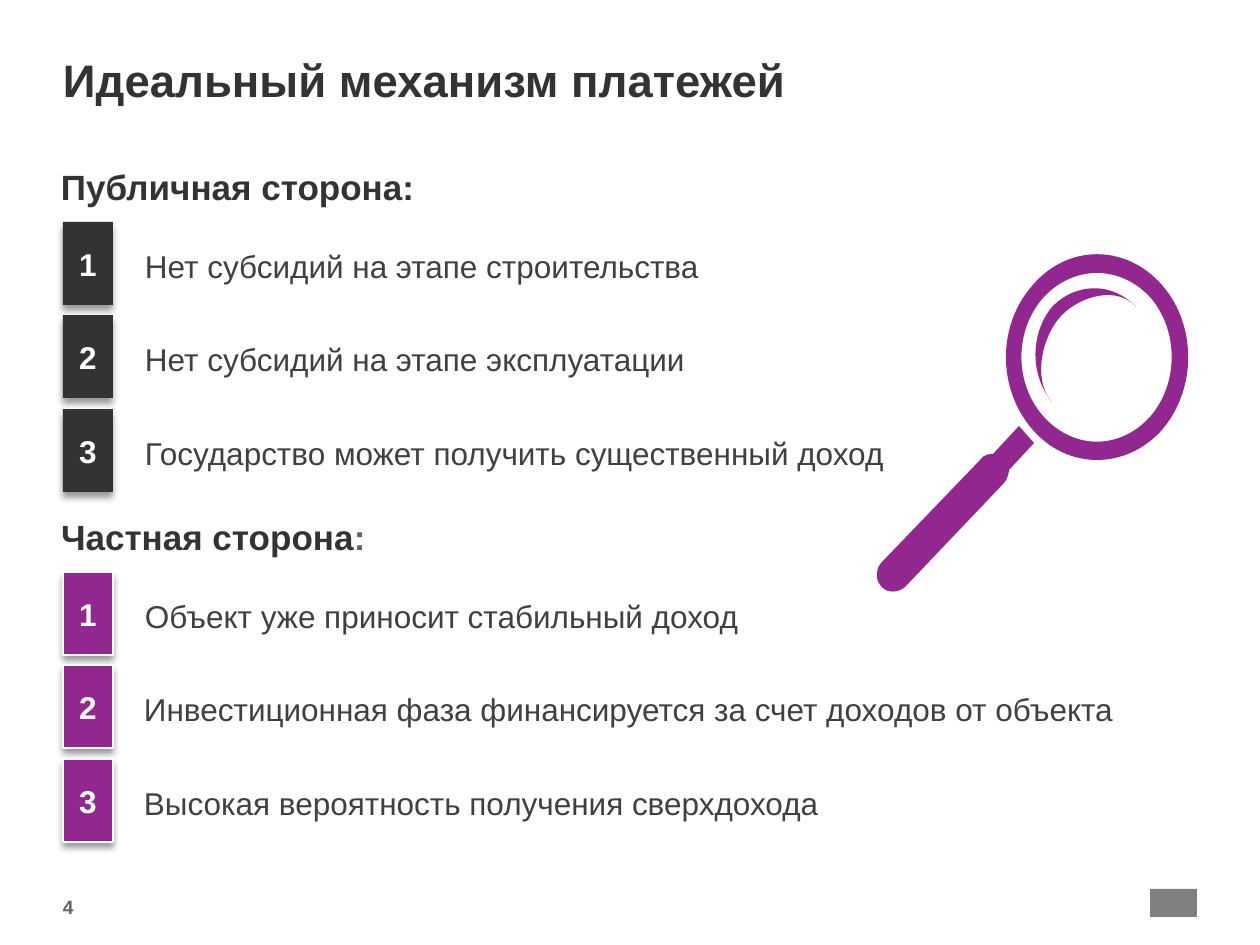
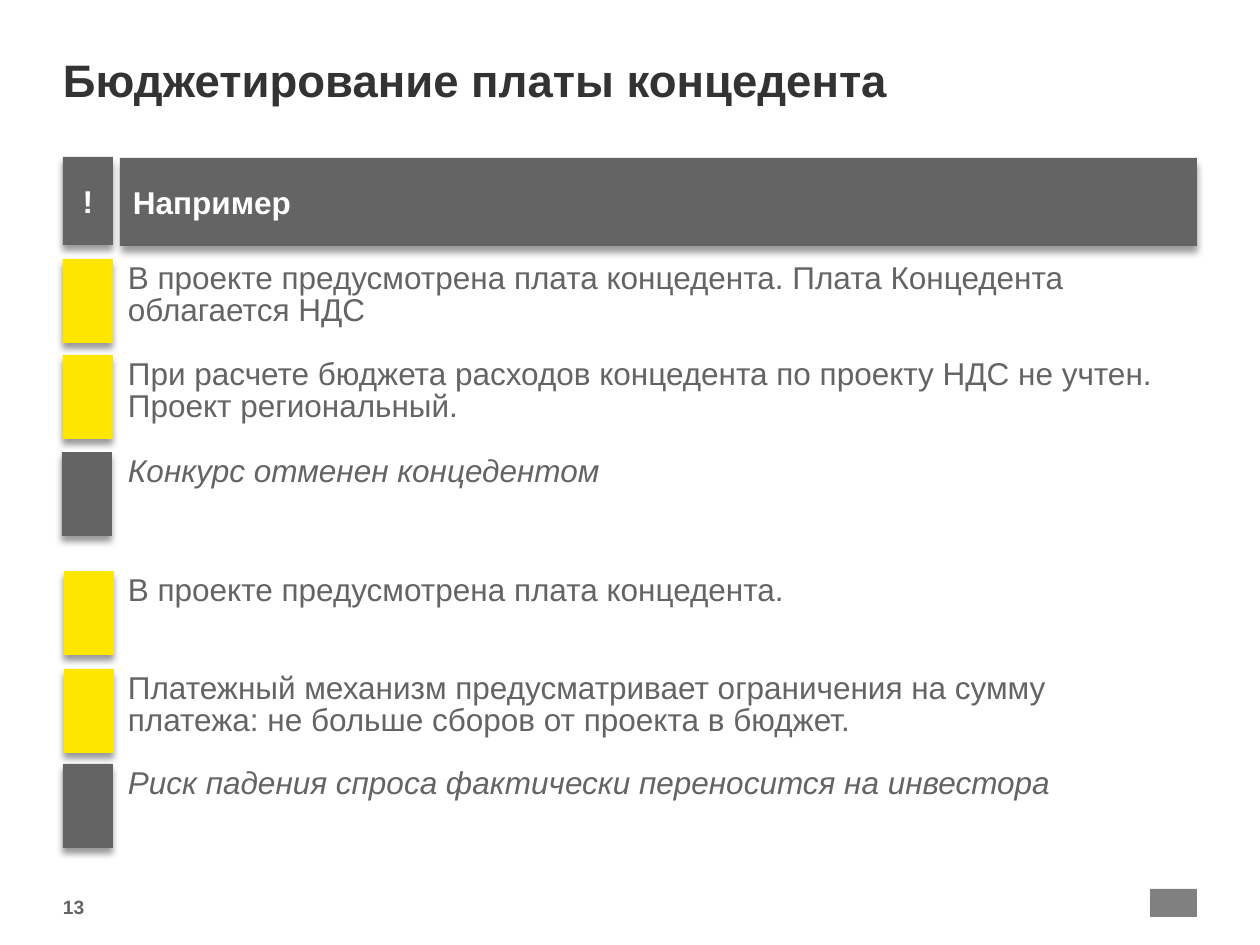
from lxml import etree
from pptx import Presentation
from pptx.dml.color import RGBColor
from pptx.enum.shapes import MSO_SHAPE
from pptx.enum.text import MSO_ANCHOR, PP_ALIGN
from pptx.oxml import parse_xml
from pptx.oxml.ns import qn
from pptx.util import Emu, Pt

EMU_PER_PX = 914400 / 126
FONT = "Arial"
DARK, BODY, GREY, WHITE = "333333", "404040", "646464", "FFFFFF"
PURPLE, YELLOW, MARK_GREY = "91278F", "FFE600", "808080"
SHADOW = (
    '<a:effectLst xmlns:a="http://schemas.openxmlformats.org/drawingml/2006/main">'
    '<a:outerShdw blurRad="50800" dist="38100" dir="5400000" algn="t" rotWithShape="0">'
    '<a:srgbClr val="000000"><a:alpha val="40000"/></a:srgbClr>'
    "</a:outerShdw></a:effectLst>"
)
color = RGBColor.from_string


def add_text(slide, frame, text="", *, size=18, ink=GREY, bold=False, italic=False,
             align=PP_ALIGN.LEFT, anchor=MSO_ANCHOR.TOP, inset=(0, 0), spacing=1.0,
             after=0, wrap=True, fill=None, outline=None, outline_width=0.75,
             shadow=False, tail=None):
    """Place text; fill or outline makes the box a rectangle, tail is (text, ink)."""
    bounds = [Emu(round(length * EMU_PER_PX)) for length in frame]
    if fill or outline:
        box = slide.shapes.add_shape(MSO_SHAPE.RECTANGLE, *bounds)
        box.shadow.inherit = False
        if fill:
            box.fill.solid()
            box.fill.fore_color.rgb = color(fill)
        else:
            box.fill.background()
        if outline:
            box.line.color.rgb = color(outline)
            box.line.width = Pt(outline_width)
        else:
            box.line.fill.background()
        if shadow:
            properties = box._element.spPr
            properties.replace(properties.find(qn("a:effectLst")), parse_xml(SHADOW))
    else:
        box = slide.shapes.add_textbox(*bounds)
    if not text:
        return
    body = box.text_frame
    body.word_wrap = wrap
    body.vertical_anchor = anchor
    body.margin_left, body.margin_top = [Emu(round(n * EMU_PER_PX)) for n in inset]
    body.margin_right, body.margin_bottom = body.margin_left, 0
    paragraph = body.paragraphs[0]
    paragraph.alignment = align
    paragraph.line_spacing = spacing
    paragraph.space_after = Pt(after)
    for words, run_ink in [(text, ink)] + ([tail] if tail else []):
        run = paragraph.add_run()
        run.text = words
        run.font.name = FONT
        run.font.size = Pt(size)
        run.font.bold = bold
        run.font.italic = italic
        run.font.color.rgb = color(run_ink)


def add_outline(slide, contours, fill):
    """Draw contours made of points (x, y) and cubic curves (x1, y1, x2, y2, x, y)."""
    builder = None
    for contour in contours:
        points = [
            [round(n * EMU_PER_PX) for n in step[i:i + 2]]
            for step in contour for i in range(0, len(step), 2)
        ]
        if builder is None:
            builder = slide.shapes.build_freeform(*points[0])
        else:
            builder.move_to(*points[0])
        builder.add_line_segments(points[1:], close=True)
    shape = builder.convert_to_shape()
    lines = iter(list(shape._element.iter(qn("a:lnTo"))))
    for contour in contours:
        for step in contour[1:]:
            line = next(lines)
            if len(step) == 6:
                curve = etree.Element(qn("a:cubicBezTo"))
                line.addprevious(curve)
                for part in (line, next(lines), next(lines)):
                    curve.append(part[0])
                    part.getparent().remove(part)
    shape.shadow.inherit = False
    shape.fill.solid()
    shape.fill.fore_color.rgb = color(fill)
    shape.line.fill.background()


deck = Presentation()
deck.slide_width = Emu(round(1260 * EMU_PER_PX))
deck.slide_height = Emu(round(945 * EMU_PER_PX))

# Title and footer of both slides
slides = []
for title, page in (("Идеальный механизм платежей", "4"),
                    ("Бюджетирование платы концедента", "13")):
    slide = deck.slides.add_slide(deck.slide_layouts[6])
    add_text(slide, (63, 895, 100, 28), page, size=11, bold=True)
    add_text(slide, (1150, 889, 47, 28), fill=MARK_GREY)
    add_text(slide, (63, 25, 1134, 118), title, size=26, ink=DARK, bold=True,
             anchor=MSO_ANCHOR.MIDDLE, spacing=0.85)
    slides.append(slide)
payments, budgeting = slides

badge = dict(ink=WHITE, bold=True, align=PP_ALIGN.CENTER, anchor=MSO_ANCHOR.MIDDLE,
             shadow=True)

# Payment mechanism: two numbered lists
sides = [
    ("Публичная сторона", DARK, DARK, None, (55, 159, 304, 42), 222, 790, [
        (145, "Нет субсидий на этапе строительства"),
        (145, "Нет субсидий на этапе эксплуатации"),
        (145, "Государство может получить существенный доход"),
    ]),
    ("Частная сторона", GREY, PURPLE, WHITE, (55, 509, 383, 45), 572, 997, [
        (145, "Объект уже приносит стабильный доход"),
        (144, "Инвестиционная фаза финансируется за счет доходов от объекта"),
        (144, "Высокая вероятность получения сверхдохода"),
    ]),
]
for side, colon_ink, badge_fill, outline, heading, list_top, width, benefits in sides:
    for index, (left, benefit) in enumerate(benefits):
        top = list_top + index * 187 // 2
        add_text(payments, (63, top, 50, 83), str(index + 1), fill=badge_fill,
                 outline=outline, **badge)
        add_text(payments, (left, top - 1, width, 84), benefit, ink=BODY,
                 anchor=MSO_ANCHOR.MIDDLE, inset=(0, 5), outline=outline)
    add_text(payments, heading, side, size=20, ink=DARK, bold=True, inset=(6, 6),
             wrap=False, outline=WHITE, outline_width=0.5, tail=(":", colon_ink))

# Magnifying glass
handle = [
    (1009, 470), (1034, 443), (1019, 426), (993, 454),
    (988, 454, 984, 455, 981, 459), (882, 562),
    (878, 566, 877, 570, 877, 575), (877, 580, 878, 583, 882, 587),
    (887, 593, 898, 593, 905, 587), (1004, 483),
    (1007, 480, 1009, 473, 1009, 470),
]
rim = [
    (1162, 285), (1126, 244, 1068, 244, 1033, 285),
    (997, 325, 997, 389, 1033, 430), (1068, 470, 1126, 470, 1162, 430),
    (1197, 389, 1197, 325, 1162, 285),
]
lens = [
    (1044, 417), (1014, 384, 1014, 330, 1044, 297),
    (1074, 265, 1120, 265, 1150, 297), (1179, 330, 1179, 384, 1150, 417),
    (1120, 450, 1074, 450, 1044, 417),
]
glint = [
    (1136, 307), (1113, 282, 1076, 282, 1052, 307),
    (1030, 334, 1030, 375, 1052, 402), (1033, 381, 1041, 338, 1061, 316),
    (1081, 295, 1118, 286, 1136, 307),
]
for contours in ([handle], [rim, lens], [glint]):
    add_outline(payments, contours, PURPLE)

# Budgeting: header band and two cases, each closed by its outcome
add_text(budgeting, (63, 157, 50, 88), "!", fill=GREY, **badge)
add_text(budgeting, (120, 158, 1077, 88), "Например", ink=WHITE, bold=True,
         anchor=MSO_ANCHOR.MIDDLE, inset=(13, 0), fill=GREY, shadow=True)
statements = [
    (63, 259, 1061, 71, False,
     "В проекте предусмотрена плата концедента. Плата Концедента облагается НДС"),
    (63, 355, 1061, 71, False,
     "При расчете бюджета расходов концедента по проекту НДС не учтен. "
     "Проект региональный."),
    (62, 452, 1061, 38, True, "Конкурс отменен концедентом"),
    (64, 571, 1061, 38, False, "В проекте предусмотрена плата концедента."),
    (64, 669, 1034, 71, False,
     "Платежный механизм предусматривает ограничения на сумму платежа: "
     "не больше сборов от проекта в бюджет."),
    (63, 764, 1034, 38, True, "Риск падения спроса фактически переносится на инвестора"),
]
for left, top, width, height, is_outcome, statement in statements:
    add_text(budgeting, (left, top, 50, 84), fill=GREY if is_outcome else YELLOW,
             shadow=True)
    add_text(budgeting, (128, top, width, height), statement, italic=is_outcome,
             inset=(0, 5), spacing=0.85, after=6)

deck.save("out.pptx")
